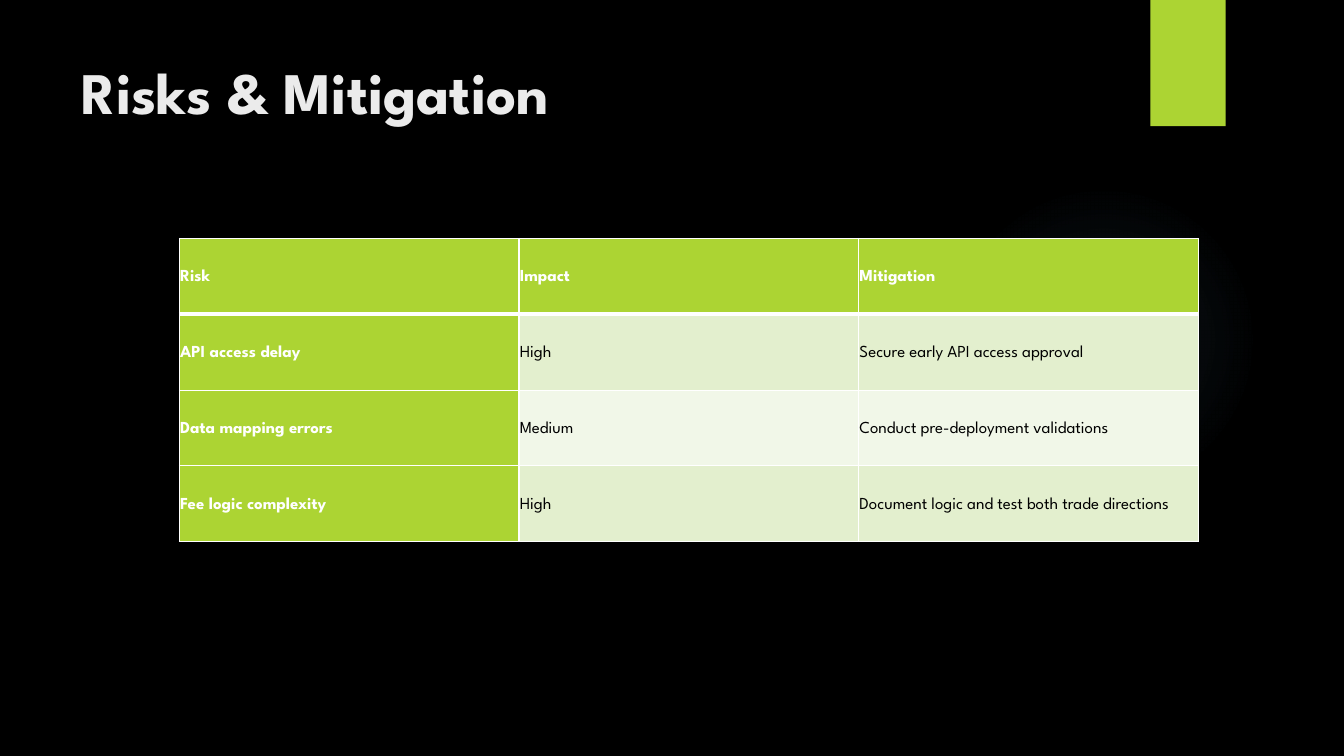
"""Builds the Risks & Mitigation slide."""
from lxml.etree import SubElement
from pptx import Presentation
from pptx.dml.color import RGBColor
from pptx.enum.shapes import MSO_SHAPE
from pptx.enum.text import MSO_ANCHOR
from pptx.oxml import parse_xml
from pptx.oxml.ns import nsdecls, qn
from pptx.util import Cm, Pt

TITLE = "Risks & Mitigation"
ROWS = [
    ("Risk", "Impact", "Mitigation"),
    ("API access delay", "High", "Secure early API access approval"),
    ("Data mapping errors", "Medium", "Conduct pre-deployment validations"),
    ("Fee logic complexity", "High", "Document logic and test both trade directions"),
]
GLOW_STOPS = [(0, 7), (36, 6), (69, 0)]

FONT = "League Spartan"
BLACK = RGBColor(0x00, 0x00, 0x00)
WHITE = RGBColor(0xFF, 0xFF, 0xFF)
OFF_WHITE = RGBColor(0xEB, 0xEB, 0xEB)
LIME = RGBColor(0xAC, 0xD4, 0x33)
BANDS = [RGBColor(0xE3, 0xEF, 0xCE), RGBColor(0xF1, 0xF7, 0xE8)]
GLOW = RGBColor(0x7A, 0xC4, 0xF0)

COL_W, ROW_H = Cm(8.56), Cm(1.91)


def add_plain_shape(s, kind, left, top, width, height):
    sp = s.shapes.add_shape(kind, Cm(left), Cm(top), Cm(width), Cm(height))
    sp.shadow.inherit = False
    sp.line.fill.background()
    return sp


def add_glow(s):
    sp = add_plain_shape(s, MSO_SHAPE.OVAL, 23.9, 4.65, 7.82, 7.82)
    stops = "".join(
        f'<a:gs pos="{pos * 1000}"><a:srgbClr val="{GLOW}">'
        f'<a:alpha val="{alpha * 1000}"/></a:srgbClr></a:gs>'
        for pos, alpha in GLOW_STOPS)
    grad = parse_xml(
        f'<a:gradFill {nsdecls("a")}><a:gsLst>{stops}</a:gsLst><a:path path="circle">'
        '<a:fillToRect l="50000" t="50000" r="50000" b="50000"/></a:path></a:gradFill>')
    sp._element.spPr.find(qn("a:prstGeom")).addnext(grad)


def add_run(p, text, size, color, bold):
    r = p.add_run()
    r.text = text
    r.font.name, r.font.size, r.font.bold = FONT, Pt(size), bold
    r.font.color.rgb = color


def set_borders(cell, bottom, top):
    tcPr = cell._tc.get_or_add_tcPr()
    for i, (side, width) in enumerate((("L", 1), ("R", 1), ("T", top), ("B", bottom))):
        ln = tcPr.makeelement(qn(f"a:ln{side}"), {"w": str(Pt(width))})
        fill = SubElement(ln, qn("a:solidFill"))
        SubElement(fill, qn("a:srgbClr"), val=str(WHITE))
        tcPr.insert(i, ln)


def fill_cell(cell, text, row, col):
    strong = row == 0 or col == 0
    cell.fill.solid()
    cell.fill.fore_color.rgb = LIME if strong else BANDS[(row - 1) % 2]
    set_borders(cell, bottom=3 if row == 0 else 1, top=3 if row == 1 else 1)
    cell.margin_left = cell.margin_right = cell.margin_top = cell.margin_bottom = Cm(0.02)
    cell.vertical_anchor = MSO_ANCHOR.MIDDLE
    p = cell.text_frame.paragraphs[0]
    p.line_spacing, p.space_after = 1.15, Pt(8)
    add_run(p, text, 12, WHITE if strong else BLACK, strong)


def add_risk_table(s):
    n_rows, n_cols = len(ROWS), len(ROWS[0])
    table = s.shapes.add_table(n_rows, n_cols, Cm(4.52), Cm(6.01),
                               COL_W * n_cols, ROW_H * n_rows).table
    for column in table.columns:
        column.width = COL_W
    for i, texts in enumerate(ROWS):
        table.rows[i].height = ROW_H
        for j, text in enumerate(texts):
            fill_cell(table.cell(i, j), text, i, j)


def main():
    prs = Presentation()
    prs.slide_width, prs.slide_height = Cm(33.87), Cm(19.05)
    s = prs.slides.add_slide(prs.slide_layouts[6])
    s.background.fill.solid()
    s.background.fill.fore_color.rgb = BLACK

    add_glow(s)
    tab = add_plain_shape(s, MSO_SHAPE.RECTANGLE, 28.99, 0, 1.9, 3.18)
    tab.fill.solid()
    tab.fill.fore_color.rgb = LIME

    tf = s.shapes.add_textbox(Cm(1.8), Cm(1.27), Cm(26.14), Cm(3.89)).text_frame
    tf.word_wrap = True
    add_run(tf.paragraphs[0], TITLE, 42, OFF_WHITE, True)

    add_risk_table(s)
    prs.save("out.pptx")


if __name__ == "__main__":
    main()
